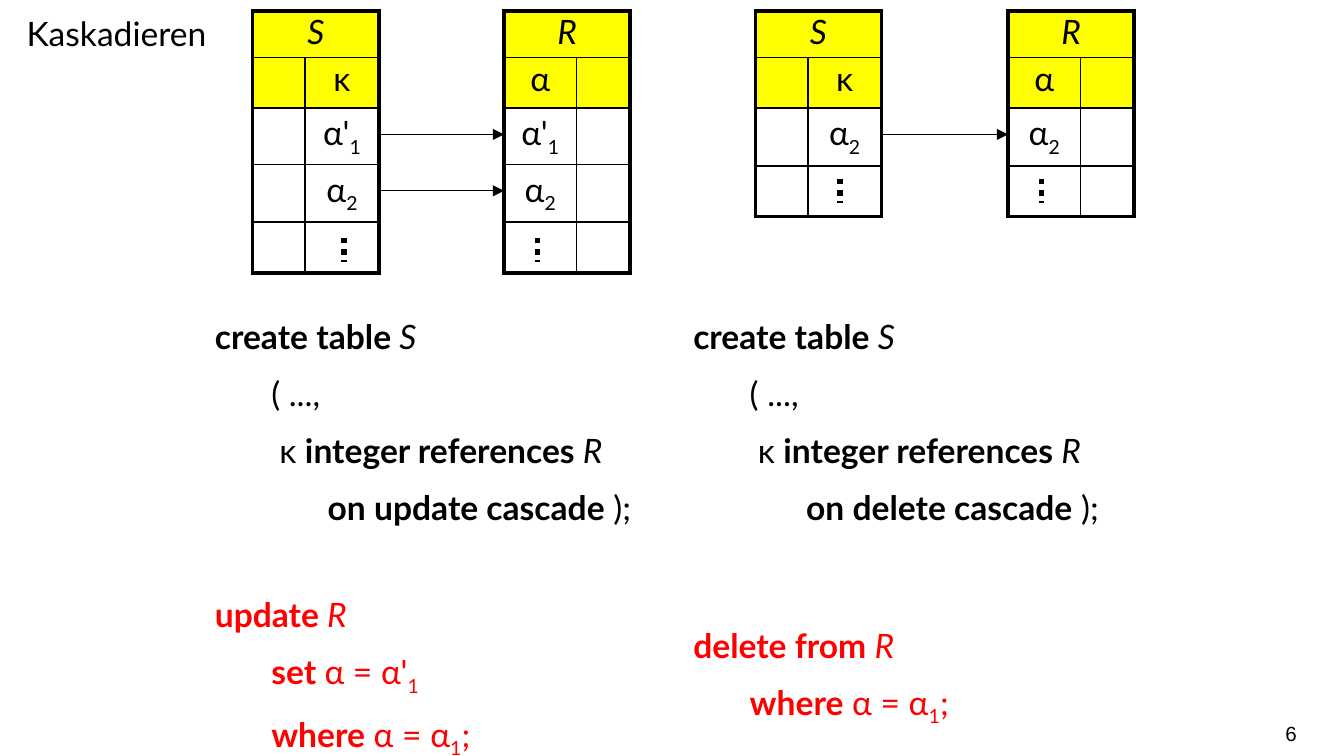
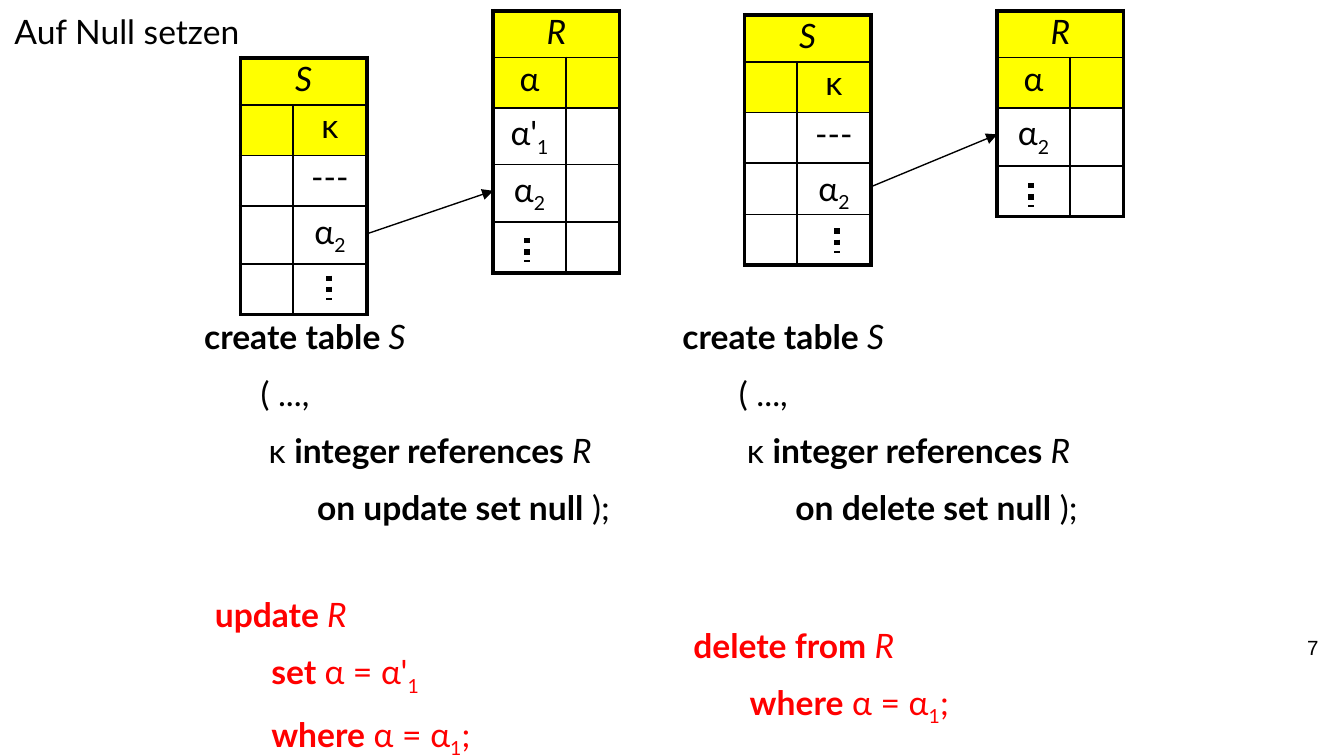
from dataclasses import dataclass

from lxml.etree import SubElement
from pptx import Presentation
from pptx.dml.color import RGBColor
from pptx.enum.dml import MSO_LINE
from pptx.enum.shapes import MSO_CONNECTOR
from pptx.enum.text import MSO_ANCHOR, MSO_AUTO_SIZE, PP_ALIGN
from pptx.oxml.ns import qn
from pptx.util import Inches, Pt


@dataclass(frozen=True)
class Theme:
    black: RGBColor = RGBColor(0x00, 0x00, 0x00)
    red: RGBColor = RGBColor(0xFF, 0x00, 0x00)
    yellow: RGBColor = RGBColor(0xFF, 0xFF, 0x00)
    font: str = "Lato"
    number_font: str = "Arial"
    body: Pt = Pt(18)
    number: Pt = Pt(11)
    gap: Pt = Pt(9)
    cell_margin: Pt = Pt(2.75)
    outer: Pt = Pt(2.25)
    inner: Pt = Pt(1)
    arrow: Pt = Pt(0.75)
    dots: Pt = Pt(3)


@dataclass(frozen=True)
class Box:
    left: float
    top: float
    width: float = 0
    height: float = 0

    def inches(self):
        return [Inches(v) for v in (self.left, self.top, self.width, self.height)]


THEME = Theme()
INDENT = 0.42
RUN_STYLES = {"plain": {}, "keyword": {"bold": True}, "name": {"italic": True}, "sub": {}}

# Cell contents: runs of (style, text)
ALPHA_NEW = [("plain", "α'"), ("sub", "1")]
ALPHA_2 = [("plain", "α"), ("sub", "2")]
NULL = [("plain", "---")]

# Key column, its position and the column widths of each relation
RELATIONS = {"S": ("κ", 1, (0.39, 0.55)), "R": ("α", 0, (0.54, 0.40))}


def apply_format(target, values):
    for attribute, value in values.items():
        setattr(target, attribute, value)


def write_runs(paragraph, runs, color=THEME.black, font=THEME.font, size=THEME.body):
    for style, text in runs:
        run = paragraph.add_run()
        run.text = text
        apply_format(run.font, {"name": font, "size": size, **RUN_STYLES[style]})
        run.font.color.rgb = color
        if style == "sub":
            run._r.get_or_add_rPr().set("baseline", "-25000")


# Lines of text, each given as (indent in inches, runs)
def write_lines(slide, box, lines, color=THEME.black):
    frame = slide.shapes.add_textbox(*box.inches()).text_frame
    apply_format(frame, {"word_wrap": True, "auto_size": MSO_AUTO_SIZE.SHAPE_TO_FIT_TEXT})
    for index, (indent, runs) in enumerate(lines):
        paragraph = frame.add_paragraph() if index else frame.paragraphs[0]
        if index:
            paragraph.space_before = THEME.gap
        if indent:
            paragraph._p.get_or_add_pPr().set("marL", str(Inches(indent)))
        write_runs(paragraph, runs, color)


def draw_line(slide, start, end, width, dash=None, arrow=False):
    points = [Inches(v) for v in (*start, *end)]
    connector = slide.shapes.add_connector(MSO_CONNECTOR.STRAIGHT, *points)
    connector.line.color.rgb = THEME.black
    apply_format(connector.line, {"width": width, "dash_style": dash})
    if arrow:
        SubElement(connector.line._get_or_add_ln(), qn("a:tailEnd"), type="triangle")
    SubElement(connector._element.spPr, qn("a:effectLst"))


def draw_borders(cell, outer_edges):
    for side in "LRTB":
        width = THEME.outer if side in outer_edges else THEME.inner
        line = SubElement(cell._tc.get_or_add_tcPr(), qn(f"a:ln{side}"), w=str(width))
        fill = SubElement(line, qn("a:solidFill"))
        SubElement(fill, qn("a:srgbClr"), val=str(THEME.black))


def fill_cell(cell, runs, heading):
    apply_format(cell, {"margin_left": 0, "margin_right": 0,
                        "margin_top": THEME.cell_margin,
                        "margin_bottom": THEME.cell_margin})
    if heading:
        cell.fill.solid()
        cell.fill.fore_color.rgb = THEME.yellow
    else:
        cell.fill.background()
    paragraph = cell.text_frame.paragraphs[0]
    apply_format(paragraph, {"alignment": PP_ALIGN.CENTER, "line_spacing": 0.9})
    write_runs(paragraph, runs)
    if not runs:
        SubElement(paragraph._p, qn("a:endParaRPr"), sz=str(int(THEME.body.pt * 100)))


# One relation: name, column headings, values and a dotted continuation row
def relation(slide, left, top, name, values, heights, dots):
    key, key_column, widths = RELATIONS[name]
    box = Box(left, top, sum(widths), sum(heights))
    table = slide.shapes.add_table(len(heights), 2, *box.inches()).table
    apply_format(table, {"first_row": False, "horz_banding": False})
    for column, width in zip(table.columns, widths):
        column.width = Inches(width)
    for row, height in zip(table.rows, heights):
        row.height = Inches(height)
    table.cell(0, 0).merge(table.cell(0, 1))

    contents = [[("name", name)], [("plain", key)], *values, []]
    for row, runs in enumerate(contents):
        for column in range(2):
            cell = table.cell(row, column)
            if cell.is_spanned:
                continue
            edges = {"L": column == 0, "R": column == 1 or row == 0,
                     "T": row == 0, "B": row == len(contents) - 1}
            draw_borders(cell, [side for side, outer in edges.items() if outer])
            shown = row == 0 or column == key_column
            fill_cell(cell, runs if shown else [], heading=row < 2)

    x, y = left + dots[0], top + dots[1]
    draw_line(slide, (x, y), (x, y + 0.18), THEME.dots, MSO_LINE.ROUND_DOT)


# Table definition with its referential action
def definition(slide, box, action):
    write_lines(slide, box, [
        (0, [("keyword", "create table "), ("name", "S")]),
        (INDENT, [("plain", "( ...,")]),
        (INDENT + 0.06, [("plain", "κ "), ("keyword", "integer references "), ("name", "R")]),
        (2 * INDENT, [("keyword", action), ("plain", " );")]),
    ])


# The two statements that trigger the actions
def statements(slide):
    where = (INDENT, [("keyword", "where"), ("plain", " α = α"), ("sub", "1"), ("plain", ";")])
    write_lines(slide, Box(1.5, 4.37, 3.19, 1.31), [
        (0, [("keyword", "update "), ("name", "R")]),
        (INDENT, [("keyword", "set "), ("plain", "α = α'"), ("sub", "1")]),
        where,
    ], THEME.red)
    write_lines(slide, Box(5.06, 4.6, 3.19, 0.86), [
        (0, [("keyword", "delete from "), ("name", "R")]),
        where,
    ], THEME.red)


def slide_number(slide, left, top, number):
    frame = slide.shapes.add_textbox(*Box(left, top, 2.24, 0.3).inches()).text_frame
    apply_format(frame, {"word_wrap": True, "margin_left": 0, "margin_right": 0,
                         "vertical_anchor": MSO_ANCHOR.MIDDLE})
    frame.paragraphs[0].alignment = PP_ALIGN.RIGHT
    write_runs(frame.paragraphs[0], [("plain", number)],
               font=THEME.number_font, size=THEME.number)


def action_slide(deck, title, title_at, relations, arrows, definitions, number):
    slide = deck.slides.add_slide(deck.slide_layouts[6])
    write_lines(slide, Box(*title_at, 3.56, 0.4), [(0, [("plain", title)])])
    for entry in relations:
        relation(slide, *entry)
    for start, end in arrows:
        draw_line(slide, start, end, THEME.arrow, arrow=True)
    for box, action in definitions:
        definition(slide, box, action)
    statements(slide)
    slide_number(slide, *number)


def main():
    deck = Presentation()
    # Widescreen, 16 to 9
    apply_format(deck, {"slide_width": Inches(10), "slide_height": Inches(10) * 9 // 16})
    after_update, after_delete = [ALPHA_NEW, ALPHA_2], [ALPHA_2]
    nulled = [NULL, ALPHA_2]
    tall, short = (0.34, 0.36, 0.42, 0.43, 0.35), (0.34, 0.36, 0.43, 0.35)

    action_slide(
        deck, "Kaskadieren", (0.1, 0.05),
        relations=[
            (1.88, 0.08, "S", after_update, tall, (0.68, 1.69)),
            (3.75, 0.08, "R", after_update, tall, (0.25, 1.69)),
            (5.62, 0.08, "S", after_delete, short, (0.63, 1.25)),
            (7.5, 0.08, "R", after_delete, short, (0.25, 1.25)),
        ],
        arrows=[((2.81, 1.42), (3.75, 1.42)), ((2.81, 1), (3.75, 1)), ((6.56, 1), (7.5, 1))],
        definitions=[(Box(1.5, 2.3, 4.19, 2.07), "on update cascade"),
                     (Box(5.06, 2.3, 3.72, 2.07), "on delete cascade")],
        number=(7.41, 5.31, "6"),
    )
    action_slide(
        deck, "Auf Null setzen", (0.01, 0.03),
        relations=[
            (1.79, 0.43, "S", nulled, (0.35, 0.37, 0.37, 0.43, 0.35), (0.66, 1.62)),
            (3.67, 0.08, "R", after_update, tall, (0.25, 1.69)),
            (5.54, 0.11, "S", nulled, (0.35, 0.37, 0.37, 0.36, 0.35), (0.69, 1.59)),
            (7.42, 0.08, "R", after_delete, short, (0.25, 1.28)),
        ],
        arrows=[((2.73, 1.74), (3.67, 1.42)), ((6.48, 1.39), (7.42, 1))],
        definitions=[(Box(1.42, 2.3, 4.19, 2.07), "on update set null"),
                     (Box(4.98, 2.3, 3.97, 1.77), "on delete set null")],
        number=(7.57, 4.67, "7"),
    )
    deck.save("out.pptx")


if __name__ == "__main__":
    main()
